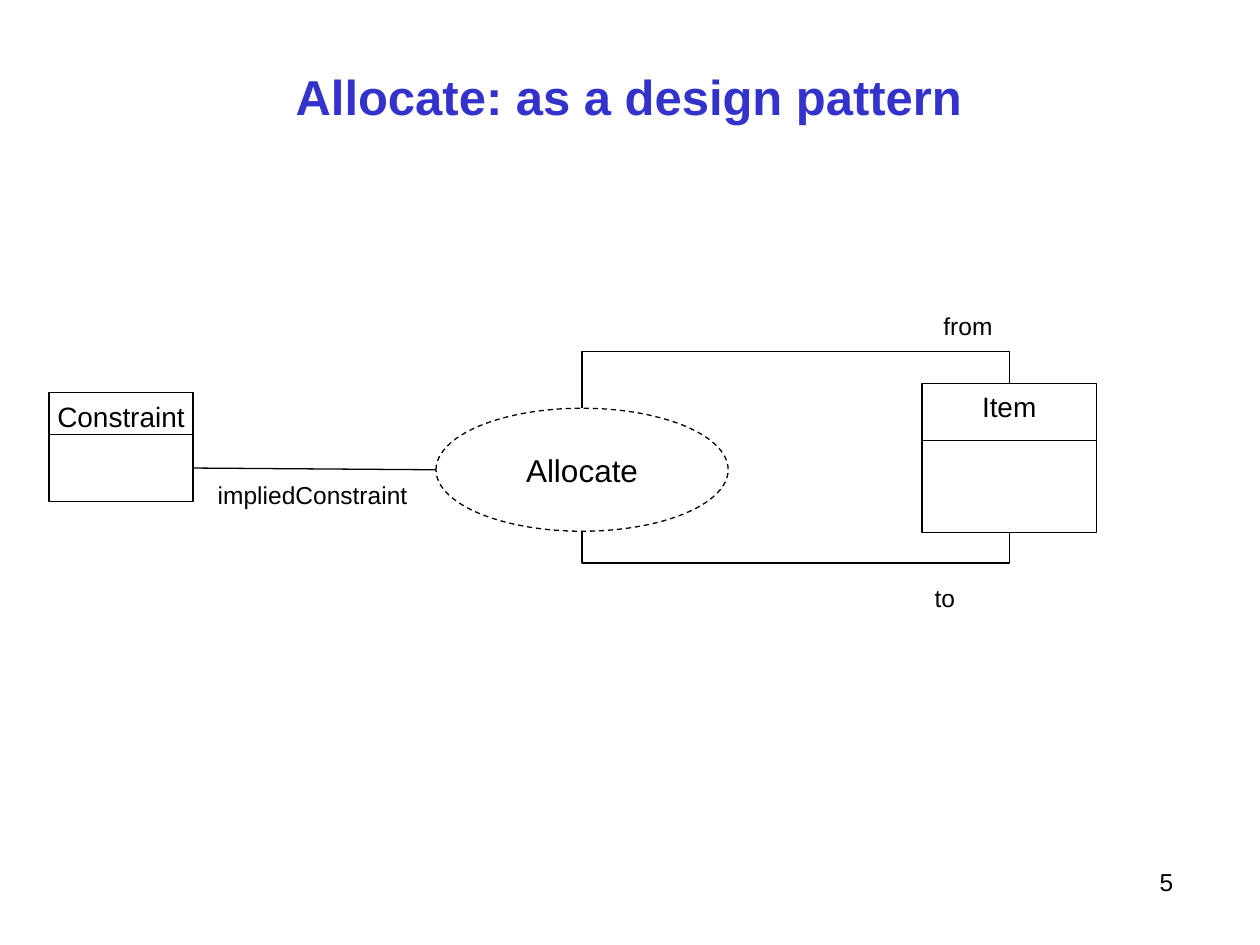
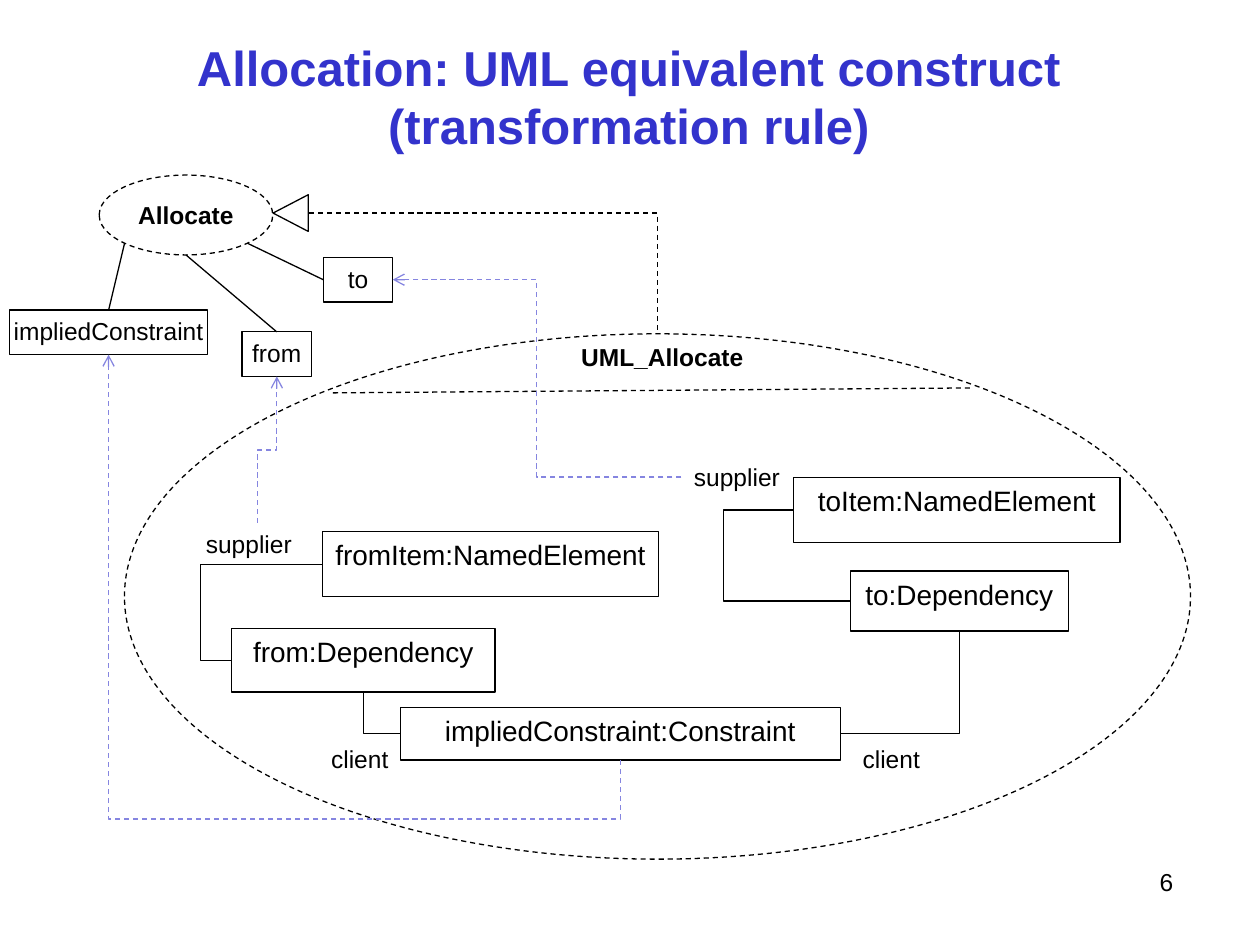
from lxml.etree import SubElement
from pptx import Presentation
from pptx.dml.color import RGBColor
from pptx.enum.dml import MSO_LINE
from pptx.enum.shapes import MSO_CONNECTOR as MC, MSO_SHAPE as MS
from pptx.enum.text import MSO_ANCHOR as ANCHOR, MSO_AUTO_SIZE as FIT, PP_ALIGN as ALIGN
from pptx.oxml.ns import qn
from pptx.util import Cm, Pt

COLORS = {"title": "3333CC", "ink": "000000", "paper": "FFFFFF", "trace": "8585E0"}
FONT = "Arial"
LINE = Pt(0.75)

# Connection sites, in the order the preset shapes number them
SITES = {
    "rect": ["top", "left", "bottom", "right"],
    "ellipse": ["top", "upper left", "left", "lower left",
                "bottom", "lower right", "right", "upper right"],
    "triangle": ["left", "lower left", "lower right", "right"],  # turned to point left
}
PLACES = {"top": (0.5, 0), "left": (0, 0.5), "bottom": (0.5, 1), "right": (1, 0.5),
          "lower left": (0.146, 0.854), "lower right": (0.854, 0.854)}


def put(shapes, text, x, y, w, h, kind=None, size=14, bold=False, color="ink",
        align=ALIGN.LEFT, anchor=ANCHOR.TOP, fill=None, dash=False, wrap=True):
    """Place a title, a preset shape or (without a kind) a text box."""
    box = Cm(x), Cm(y), Cm(w), Cm(h)
    if kind == "title":
        sp = shapes.title
        sp.left, sp.top, sp.width, sp.height = box
    elif kind is None:
        sp = shapes.add_textbox(*box)
    else:
        sp = shapes.add_shape(kind, *box)
        sp.shadow.inherit = False
        sp.line.color.rgb = RGBColor.from_string(COLORS["ink"])
        sp.line.width = LINE
        if dash:
            sp.line.dash_style = MSO_LINE.DASH
        if fill:
            sp.fill.solid()
            sp.fill.fore_color.rgb = RGBColor.from_string(COLORS[fill])
        else:
            sp.fill.background()
    tf = sp.text_frame
    tf.word_wrap = wrap
    tf.auto_size = FIT.SHAPE_TO_FIT_TEXT if kind is None else FIT.NONE
    tf.vertical_anchor = anchor
    p = tf.paragraphs[0]
    p.text = text
    p.alignment = align
    for r in p.runs:
        r.font.name, r.font.size, r.font.bold = FONT, Pt(size), bold
        r.font.color.rgb = RGBColor.from_string(COLORS[color])
    return sp


def link(shapes, start, start_side, end, end_side, bend=None, color="ink",
         dash=False, arrow=False):
    """Join two shapes: straight, with one "corner", or by a middle leg at bend cm."""
    ends = [(start, start_side), (end, end_side)]
    (x0, y0), (x1, y1) = [(sp.left + sp.width * PLACES[side][0],
                           sp.top + sp.height * PLACES[side][1]) for sp, side in ends]
    x, y, dx, dy = (x0 + x1) / 2, (y0 + y1) / 2, x1 - x0, y1 - y0
    upright = bend is not None and start_side in ("top", "bottom")
    # A path that leaves vertically is a horizontal one turned by 90 degrees
    w, h = (dy, -dx) if upright else (dx, dy)
    cn = shapes.add_connector(MC.STRAIGHT if bend is None else MC.ELBOW,
                              *[int(v) for v in (x - w / 2, y - h / 2, x + w / 2, y + h / 2)])
    sp_pr = cn._element.spPr
    if upright:
        sp_pr.xfrm.set("rot", "5400000")
    geom = sp_pr.find(qn("a:prstGeom"))
    if bend == "corner":
        geom.set("prst", "bentConnector2")
    elif bend is not None:
        share = (Cm(bend) - y0) / dy if upright else (Cm(bend) - x0) / dx
        SubElement(geom.find(qn("a:avLst")), qn("a:gd"), name="adj1",
                   fmla=f"val {round(share * 100000)}")
    for tag, (sp, side) in zip(("a:stCxn", "a:endCxn"), ends):
        prst = sp._element.xpath(".//a:prstGeom/@prst")[0]
        SubElement(cn._element.nvCxnSpPr.cNvCxnSpPr, qn(tag),
                   id=str(sp.shape_id), idx=str(SITES[prst].index(side)))
    cn.line.color.rgb = RGBColor.from_string(COLORS[color])
    cn.line.width = LINE
    if dash:
        cn.line.dash_style = MSO_LINE.DASH
    if arrow:
        SubElement(sp_pr.find(qn("a:ln")), qn("a:tailEnd"), type="arrow")
    SubElement(sp_pr, qn("a:effectLst"))
    return cn


prs = Presentation()
prs.slide_width, prs.slide_height = Cm(25.4), Cm(19.05)

# Titles and slide numbers
slides = []
for number, title in enumerate(["Allocate: as a design pattern",
                                "Allocation: UML equivalent construct\n(transformation rule)"], 5):
    s = prs.slides.add_slide(prs.slide_layouts[5])
    put(s.shapes, title, 1.27, 0.64, 22.81, 2.59, kind="title", size=28, bold=True,
        color="title", align=ALIGN.CENTER, anchor=ANCHOR.MIDDLE)
    put(s.shapes, str(number), 18.62, 17.35, 5.28, 1.27, align=ALIGN.RIGHT)
    slides.append(s.shapes)

# Formats shared by the diagrams
BOX = dict(kind=MS.RECTANGLE, align=ALIGN.CENTER, fill="paper", wrap=False)
OVAL = dict(kind=MS.OVAL, align=ALIGN.CENTER, anchor=ANCHOR.MIDDLE, dash=True)
TRACE = dict(color="trace", dash=True, arrow=True)

# Slide 5: the pattern and its two classes
pattern = slides[0]
allocate = put(pattern, "Allocate", 8.79, 8.23, 5.89, 2.48, size=18, **OVAL)
heads, bodies = {}, {}
for name, x, y, w, head_h, body_h in [("Constraint", 0.99, 7.92, 2.9, 0.84, 1.35),
                                      ("Item", 18.59, 7.73, 3.51, 1.15, 1.85)]:
    group = pattern.add_group_shape().shapes
    bodies[name] = put(group, "", x, y + head_h, w, body_h, kind=MS.RECTANGLE)
    heads[name] = put(group, name, x, y, w, head_h, size=16, **BOX)

# Slide 5: roles
link(pattern, allocate, "top", heads["Item"], "top", bend=7.09)
link(pattern, allocate, "bottom", bodies["Item"], "bottom", bend=11.35)
link(pattern, allocate, "left", bodies["Constraint"], "right")
for role, x, y, w in [("from", 18.77, 6.15, 3.18), ("to", 18.59, 11.63, 3.18),
                      ("impliedConstraint", 4.14, 9.55, 4.39)]:
    put(pattern, role, x, y, w, 0.86)

# Slide 6: elements inside the construct
construct = slides[1]
from_dep, implied, from_item, to_item, to_dep = [
    put(construct, text, x, y, w, h, size=16, **BOX) for text, x, y, w, h in [
        ("from:Dependency", 4.67, 12.67, 5.31, 1.28),
        ("impliedConstraint:Constraint", 8.07, 14.26, 8.87, 1.06),
        ("fromItem:NamedElement", 6.5, 10.72, 6.78, 1.31),
        ("toItem:NamedElement", 16, 9.63, 6.58, 1.31),
        ("to:Dependency", 17.14, 11.51, 4.4, 1.21)]]
link(construct, from_dep, "bottom", implied, "left", bend="corner")
link(construct, implied, "right", to_dep, "bottom", bend="corner")
to_supplier, from_supplier, to_client, from_client = [
    put(construct, text, x, y, w, 0.86, align=align) for text, x, y, w, align in [
        ("supplier", 13.74, 9.19, 2.64, ALIGN.LEFT),
        ("supplier", 3.9, 10.54, 2.59, ALIGN.LEFT),
        ("client", 17.14, 14.88, 3.18, ALIGN.LEFT),
        ("client", 4.9, 14.88, 3.18, ALIGN.RIGHT)]]

# Slide 6: construct outline with its name compartment
uml_allocate = put(construct, "", 2.51, 6.73, 21.49, 10.59, **OVAL)
put(construct, "UML_Allocate", 11.46, 6.78, 3.78, 0.86, bold=True, align=ALIGN.RIGHT)
divider = construct.add_connector(MC.STRAIGHT, Cm(6.71), Cm(7.92), Cm(19.61), Cm(7.82))
divider.line.color.rgb = RGBColor.from_string(COLORS["ink"])
divider.line.width = LINE
divider.line.dash_style = MSO_LINE.DASH
SubElement(divider._element.spPr, qn("a:effectLst"))

# Slide 6: the pattern that the construct realizes
allocate = put(construct, "Allocate", 2, 3.53, 3.5, 1.61, bold=True, **OVAL)
triangle = put(construct, "", 5.49, 3.94, 0.74, 0.71, kind=MS.ISOSCELES_TRIANGLE)
triangle.rotation = 270
link(construct, triangle, "right", uml_allocate, "top", bend="corner", dash=True)
from_role, to_role, implied_role = [
    put(construct, text, x, y, w, 0.9, **BOX) for text, x, y, w in [
        ("from", 4.88, 6.69, 1.4), ("to", 6.52, 5.19, 1.4),
        ("impliedConstraint", 0.19, 6.25, 4)]]
link(construct, implied_role, "top", allocate, "lower left")
link(construct, from_role, "top", allocate, "bottom")
link(construct, to_role, "left", allocate, "lower right")

# Slide 6: traces to the roles and links between the elements
link(construct, to_supplier, "left", to_role, "right", bend=10.82, **TRACE)
link(construct, from_supplier, "top", from_role, "bottom", bend=9.07, **TRACE)
link(construct, implied, "bottom", implied_role, "bottom", bend=16.51, **TRACE)
link(construct, from_dep, "left", from_item, "left", bend=4.04)
link(construct, to_dep, "left", to_item, "left", bend=14.58)

prs.save("out.pptx")
